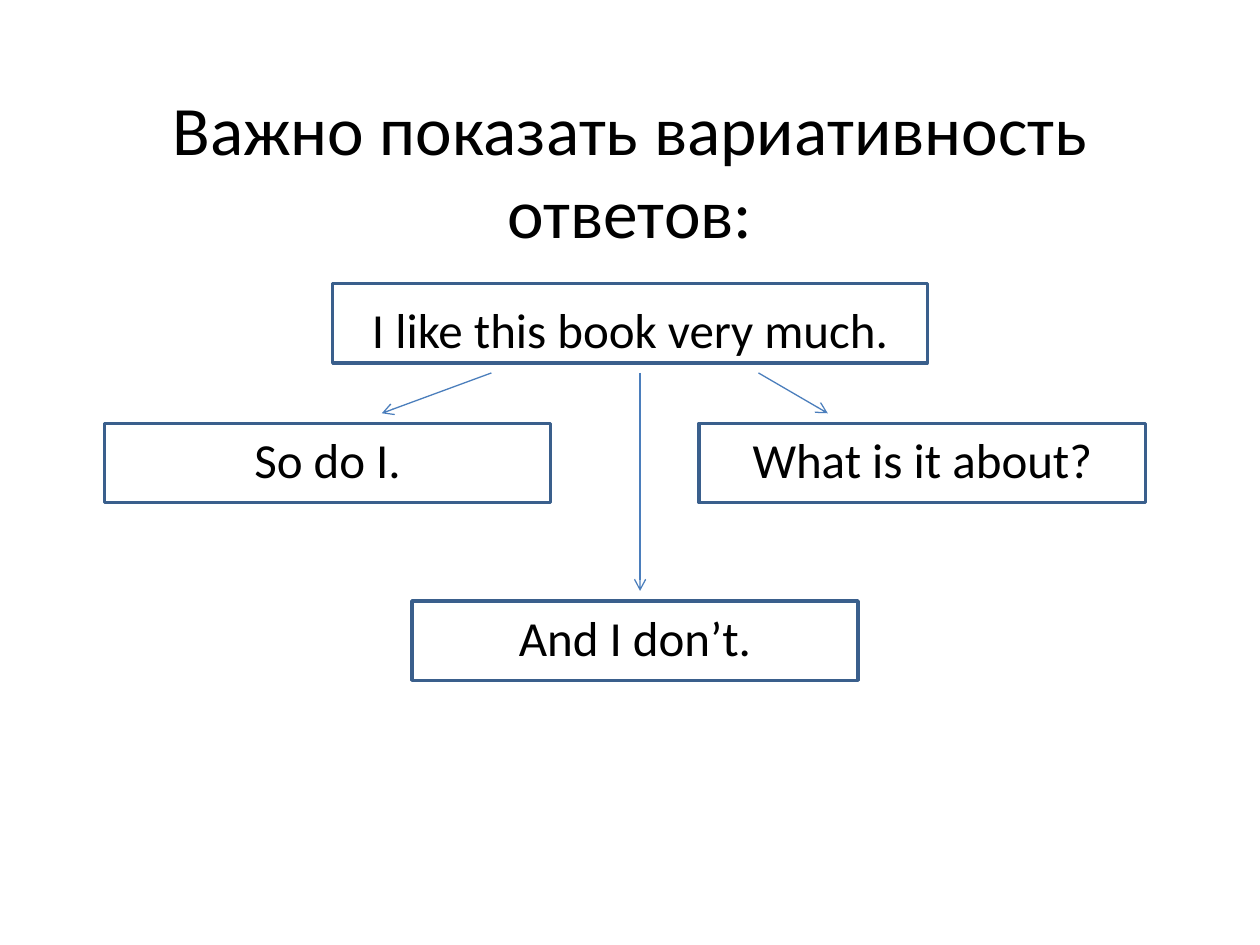
import pptx
import pptx.util
import pptx.dml.color
import pptx.enum.shapes
import pptx.enum.text
import pptx.oxml
import pptx.oxml.ns

COLORS = {"text": "000000", "border": "3A5F8C", "arrow": "4B7EBC"}
FONT = "Calibri"
COLUMNS, ROWS = 100, 75
CELL = pptx.util.Inches(0.1)

# Grid positions, in columns and rows
CARD_HEIGHT = 6.3
REPLY_WIDTH = 35.4
REPLY_ROW = 33.6
LOWER_ROW = 47.7
STATEMENT = (26.4, 22.5, 47.2, CARD_HEIGHT)
REPLIES = [
    ("So do I.", 8.3, REPLY_ROW),
    ("What is it about?", 55.5, REPLY_ROW),
    ("And I don’t.", 32.7, LOWER_ROW),
]
ARROW_GAP = 0.8
# Start column, end column and row of the reply each arrow leads to
ARROWS = [(39, 30.3, REPLY_ROW), (60.2, 65.7, REPLY_ROW), (50.8, 50.8, LOWER_ROW)]


def grid(*cells):
    return [round(cell * CELL) for cell in cells]


def color(name):
    return pptx.dml.color.RGBColor.from_string(COLORS[name])


def write(frame, text, size):
    frame.word_wrap = True
    para = frame.paragraphs[0]
    para.text = text
    para.alignment = pptx.enum.text.PP_ALIGN.CENTER
    para.font.name = FONT
    para.font.size = pptx.util.Pt(size)
    para.font.color.rgb = color("text")


def add_title(page, box, text):
    frame = page.shapes.add_textbox(*grid(*box)).text_frame
    frame.vertical_anchor = pptx.enum.text.MSO_ANCHOR.MIDDLE
    write(frame, text, 39.6)


def add_card(page, box, text, top_margin=0.5):
    """Outlined box with its phrase hung from the top edge."""
    card = page.shapes.add_shape(pptx.enum.shapes.MSO_SHAPE.RECTANGLE, *grid(*box))
    card.shadow.inherit = False
    card.fill.background()
    card.line.color.rgb = color("border")
    card.line.width = pptx.util.Pt(2)
    frame = card.text_frame
    frame.vertical_anchor = pptx.enum.text.MSO_ANCHOR.TOP
    frame.margin_top, frame.margin_bottom = grid(top_margin, 0)
    write(frame, text, 28)


def add_arrow(page, start, end):
    arrow = page.shapes.add_connector(
        pptx.enum.shapes.MSO_CONNECTOR.STRAIGHT, *grid(*start, *end)
    )
    arrow.line.color.rgb = color("arrow")
    arrow.line.width = pptx.util.Pt(0.75)
    head = pptx.oxml.parse_xml(
        f'<a:tailEnd {pptx.oxml.ns.nsdecls("a")} type="arrow"/>'
    )
    arrow.line._get_or_add_ln().append(head)
    effects = pptx.oxml.parse_xml(f'<a:effectLst {pptx.oxml.ns.nsdecls("a")}/>')
    arrow._element.spPr.append(effects)


def add_dialogue(page):
    """Statement with arrows to its possible replies."""
    add_card(page, STATEMENT, "I like this book very much.", top_margin=1.3)
    for text, column, row in REPLIES:
        add_card(page, (column, row, REPLY_WIDTH, CARD_HEIGHT), text)
    arrow_top = STATEMENT[1] + CARD_HEIGHT + ARROW_GAP
    for start, end, reply_row in ARROWS:
        add_arrow(page, (start, arrow_top), (end, reply_row - ARROW_GAP))


def main():
    deck = pptx.Presentation()
    deck.slide_width, deck.slide_height = grid(COLUMNS, ROWS)
    page = deck.slides.add_slide(deck.slide_layouts[6])
    add_title(page, (5, 6.8, 90, 13.2), "Важно показать вариативность ответов:")
    add_dialogue(page)
    deck.save("out.pptx")


if __name__ == "__main__":
    main()
